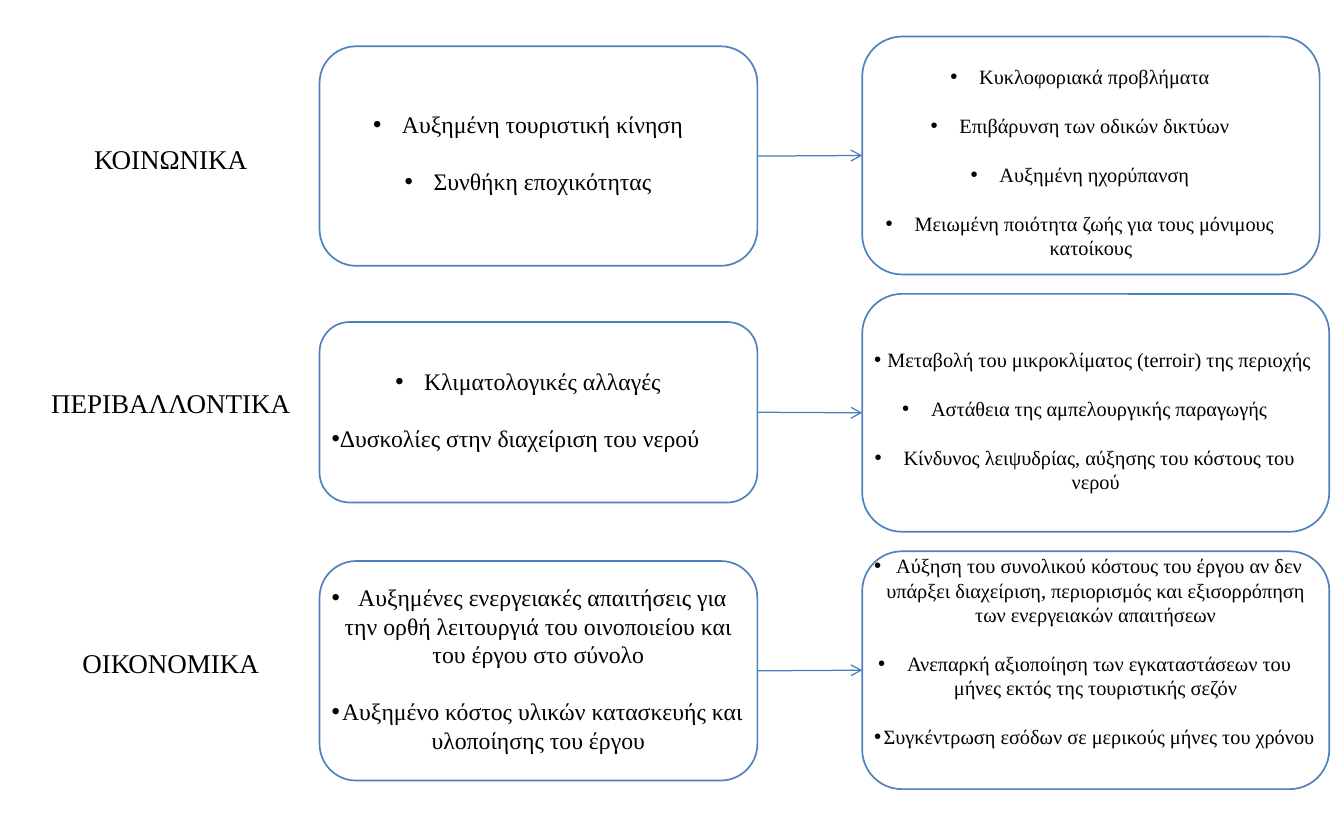
"""Build a slide linking social, environmental and economic pressures to their effects."""
from lxml import etree
from pptx import Presentation
from pptx.dml.color import RGBColor
from pptx.enum import shapes, text
from pptx.oxml import ns
from pptx.util import Inches, Pt


def colour(code):
    return RGBColor.from_string(code)


def add_text(page, place, lines, size, bullet):
    box = page.shapes.add_textbox(*map(Inches, place))
    frame = box.text_frame
    frame.word_wrap = True
    for index, (line, align) in enumerate(lines):
        para = frame.paragraphs[0] if index == 0 else frame.add_paragraph()
        para.alignment = align
        if index:
            para.space_before = Pt(size * 1.2)
        if bullet:
            properties = para._p.get_or_add_pPr()
            etree.SubElement(properties, ns.qn("a:buFont"), typeface="Arial")
            etree.SubElement(properties, ns.qn("a:buChar"), char="•")
        span = para.add_run()
        span.text = line
        look = {"name": "Times New Roman", "size": Pt(size)}
        for key, value in look.items():
            setattr(span.font, key, value)
        span.font.color.rgb = colour("000000")
    return frame


CENTER = text.PP_ALIGN.CENTER
JUSTIFY = text.PP_ALIGN.JUSTIFY
LABEL_LEFT, LABEL_WIDTH, LABEL_HEIGHT = 0.25, 2.3, 0.4

rows = [
    {
        "label": ("ΚΟΙΝΩΝΙΚΑ", 1.1),
        "cause": ((2.62, 0.38, 3.59, 1.8), (2.62, 0.85, 3.59, 0.81), 14, [
            ("Αυξημένη τουριστική κίνηση", CENTER),
            ("Συνθήκη εποχικότητας", CENTER),
        ]),
        "effect": ((7.07, 0.3, 3.75, 1.95), (7.07, 0.48, 3.75, 1.99), 12, [
            ("Κυκλοφοριακά προβλήματα", CENTER),
            ("Επιβάρυνση των οδικών δικτύων", CENTER),
            ("Αυξημένη ηχορύπανση", CENTER),
            ("Μειωμένη ποιότητα ζωής για τους μόνιμους κατοίκους", CENTER),
        ]),
    },
    {
        "label": ("ΠΕΡΙΒΑΛΛΟΝΤΙΚΑ", 3.1),
        "cause": ((2.62, 2.64, 3.59, 1.48), (2.62, 2.96, 3.59, 0.81), 14, [
            ("Κλιματολογικές αλλαγές", CENTER),
            ("Δυσκολίες στην διαχείριση του νερού", JUSTIFY),
        ]),
        "effect": ((7.07, 2.41, 3.83, 1.95), (7.07, 2.8, 3.83, 1.78), 12, [
            ("Μεταβολή του μικροκλίματος (terroir) της περιοχής", CENTER),
            ("Αστάθεια της αμπελουργικής παραγωγής", CENTER),
            ("Κίνδυνος λειψυδρίας, αύξησης του κόστους του νερού", CENTER),
        ]),
    },
    {
        "label": ("ΟΙΚΟΝΟΜΙΚΑ", 5.23),
        "cause": ((2.62, 4.6, 3.59, 1.8), (2.62, 4.73, 3.59, 1.58), 14, [
            ("Αυξημένες ενεργειακές απαιτήσεις για την ορθή λειτουργιά του "
             "οινοποιείου και του έργου στο σύνολο", CENTER),
            ("Αυξημένο κόστος υλικών κατασκευής και υλοποίησης του έργου", CENTER),
        ]),
        "effect": ((7.07, 4.52, 3.83, 1.95), (7.07, 4.49, 3.83, 1.95), 12, [
            ("Αύξηση του συνολικού κόστους του έργου αν δεν υπάρξει διαχείριση, "
             "περιορισμός και εξισορρόπηση των ενεργειακών απαιτήσεων", CENTER),
            ("Ανεπαρκή αξιοποίηση των εγκαταστάσεων του μήνες εκτός της "
             "τουριστικής σεζόν", CENTER),
            ("Συγκέντρωση εσόδων σε μερικούς μήνες του χρόνου", CENTER),
        ]),
    },
]

deck = Presentation()
deck.slide_width, deck.slide_height = Inches(11.02), Inches(6.69)
page = deck.slides.add_slide(deck.slide_layouts[6])

for row in rows:
    label, top = row["label"]
    place = (LABEL_LEFT, top, LABEL_WIDTH, LABEL_HEIGHT)
    frame = add_text(page, place, [(label, CENTER)], 16, False)
    frame.vertical_anchor = text.MSO_ANCHOR.MIDDLE

    frames = []
    for side in ("cause", "effect"):
        outline, place, size, lines = row[side]
        box = page.shapes.add_shape(
            shapes.MSO_SHAPE.ROUNDED_RECTANGLE, *map(Inches, outline))
        box.shadow.inherit = False
        box.fill.background()
        box.line.color.rgb = colour("4F81BD")
        box.line.width = Pt(1)
        frames.append(box)
        add_text(page, place, lines, size, True)

    arrow = page.shapes.add_connector(shapes.MSO_CONNECTOR.STRAIGHT, 0, 0, 0, 0)
    arrow.begin_connect(frames[0], 3)
    arrow.end_connect(frames[1], 1)
    arrow.line.color.rgb = colour("4B7EBC")
    arrow.line.width = Pt(0.75)
    etree.SubElement(arrow.line._get_or_add_ln(), ns.qn("a:tailEnd"), type="arrow")
    etree.SubElement(arrow._element.spPr, ns.qn("a:effectLst"))

deck.save("out.pptx")
